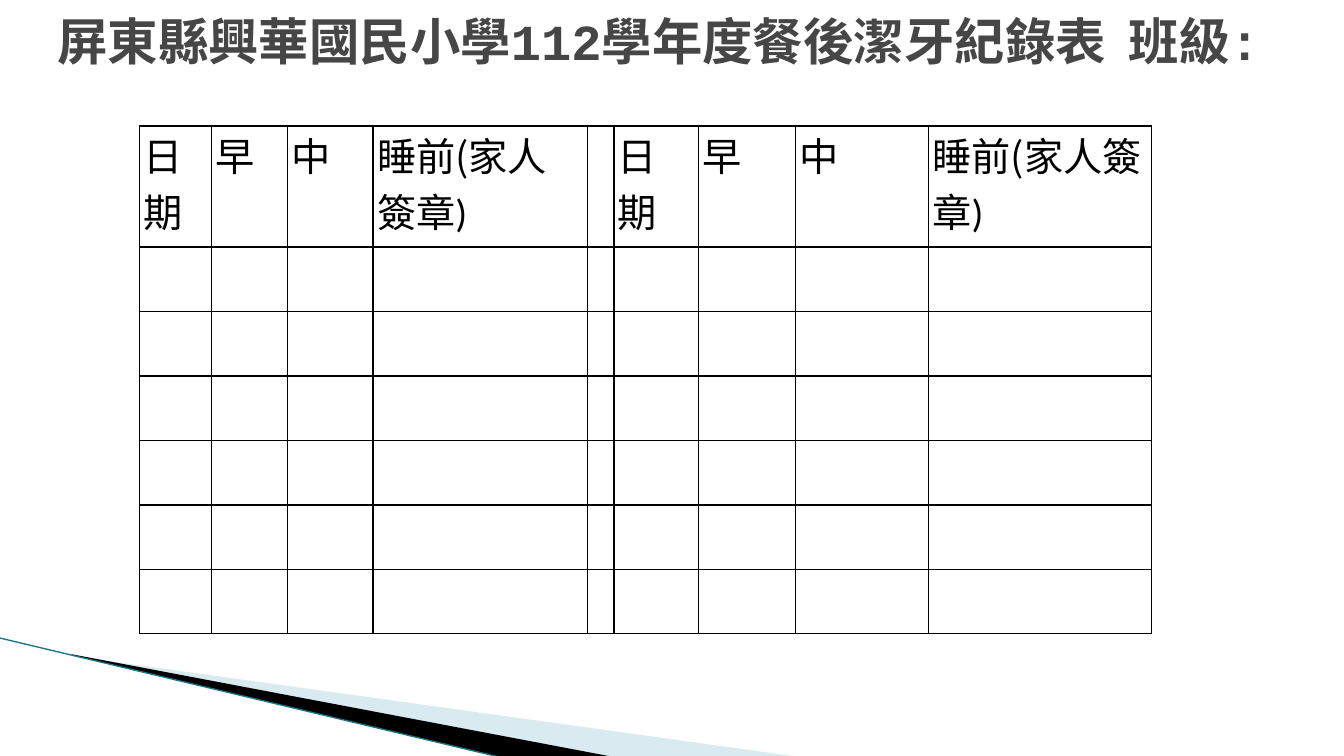
from pptx import Presentation
from pptx.dml.color import RGBColor
from pptx.enum.shapes import MSO_CONNECTOR as Conn
from pptx.enum.text import MSO_ANCHOR as Anchor
from pptx.oxml import parse_xml as to_xml
from pptx.oxml.ns import nsdecls, qn
from pptx.util import Inches, Pt

BLACK = RGBColor(0x00, 0x00, 0x00)
GREY = RGBColor(0x46, 0x46, 0x46)
PALE = RGBColor(0xA0, 0xCB, 0xDC)
TEAL = RGBColor(0x1B, 0x75, 0x87)
CJK = "Noto Sans CJK SC"

TITLE = dict(size=Pt(36), name="Courier New", bold=True)
HEAD = dict(size=Pt(28), name="Calibri", bold=False)

HALF = [["日期"], ["早"], ["中"], ["睡前", "(", "家人簽章)"]]
LABELS = HALF + [[]] + HALF
COLS = [0.72, 0.75, 0.85, 2.13, 0.26, 0.84, 0.96, 1.32, 2.21]
ROWS = [1.2] + [0.64] * 6


def add_run(para, text, style, color):
    run = para.add_run()
    run.text = text
    for key, value in style.items():
        setattr(run.font, key, value)
    run.font.color.rgb = color
    run.font._element.append(
        to_xml(f'<a:ea {nsdecls("a")} typeface="{CJK}"/>'))


def add_wedge(slide, points, color, alpha=None):
    spots = [(Inches(x), Inches(y)) for x, y in points]
    form = slide.shapes.build_freeform(*spots[0])
    form.add_line_segments(spots[1:], close=True)
    wedge = form.convert_to_shape()
    wedge.shadow.inherit = False
    wedge.fill.solid()
    wedge.fill.fore_color.rgb = color
    wedge.line.fill.background()
    if alpha:
        tint = wedge._element.spPr.find(".//" + qn("a:srgbClr"))
        tint.append(to_xml(f'<a:alpha {nsdecls("a")} val="{alpha * 1000}"/>'))


def add_corner(slide, left, top):
    # Wedge points are offsets from the corner's top left
    def shift(points):
        return [(left + x, top + y) for x, y in points]

    add_wedge(slide, shift([(0.73, 0.18), (7.93, 1.18), (6.08, 1.18),
                            (0.73, 0.17)]), PALE, 40)
    add_wedge(slide, shift([(0.71, 0.16), (6.09, 1.18), (4.96, 1.18),
                            (0.72, 0.17)]), BLACK)
    # Thin edge line
    edge = slide.shapes.add_connector(
        Conn.STRAIGHT, Inches(left), Inches(top),
        Inches(left + 4.95), Inches(top + 1.18))
    edge.line.color.rgb = TEAL
    edge.line.width = Pt(0.95)
    edge._element.spPr.append(to_xml(f'<a:effectLst {nsdecls("a")}/>'))


def add_edges(cell):
    props = cell._tc.get_or_add_tcPr()
    for spot, side in enumerate(("lnL", "lnR", "lnT", "lnB")):
        props.insert(spot, to_xml(
            f'<a:{side} {nsdecls("a")} w="12700"><a:solidFill>'
            f'<a:srgbClr val="{BLACK}"/></a:solidFill></a:{side}>'))


def add_log(slide, left, top):
    frame = slide.shapes.add_table(
        len(ROWS), len(COLS), Inches(left), Inches(top),
        Inches(sum(COLS)), Inches(sum(ROWS)))
    table = frame.table
    table.first_row = table.horz_banding = False
    for col, width in zip(table.columns, COLS):
        col.width = Inches(width)
    for row, height in zip(table.rows, ROWS):
        row.height = Inches(height)
    for cell in table.iter_cells():
        cell.margin_left = cell.margin_right = Inches(0.04)
        cell.margin_top = cell.margin_bottom = 0
        cell.fill.background()
        add_edges(cell)
    # Header labels
    for cell, parts in zip(table.rows[0].cells, LABELS):
        para = cell.text_frame.paragraphs[0]
        para.space_after = Pt(4.5)
        for text in parts:
            style = HEAD | {"name": CJK} if text == "(" else HEAD
            add_run(para, text, style, BLACK)


def add_title(slide, left, top, width, height):
    box = slide.shapes.add_textbox(
        Inches(left), Inches(top), Inches(width), Inches(height))
    frame = box.text_frame
    frame.word_wrap = True
    frame.vertical_anchor = Anchor.MIDDLE
    frame.margin_top = frame.margin_right = 0
    # Lifts the line to the upper part of the box
    frame.margin_bottom = Inches(0.75)
    add_run(frame.paragraphs[0],
            "屏東縣興華國民小學112學年度餐後潔牙紀錄表  班級:", TITLE, GREY)


def main():
    deck = Presentation()
    deck.slide_width, deck.slide_height = Inches(13.33), Inches(7.5)
    slide = deck.slides.add_slide(deck.slide_layouts[6])
    add_corner(slide, 0, 6.33)
    add_log(slide, 1.38, 1.25)
    add_title(slide, 0.47, 0.15, 12.33, 1.25)
    deck.save("out.pptx")


if __name__ == "__main__":
    main()
